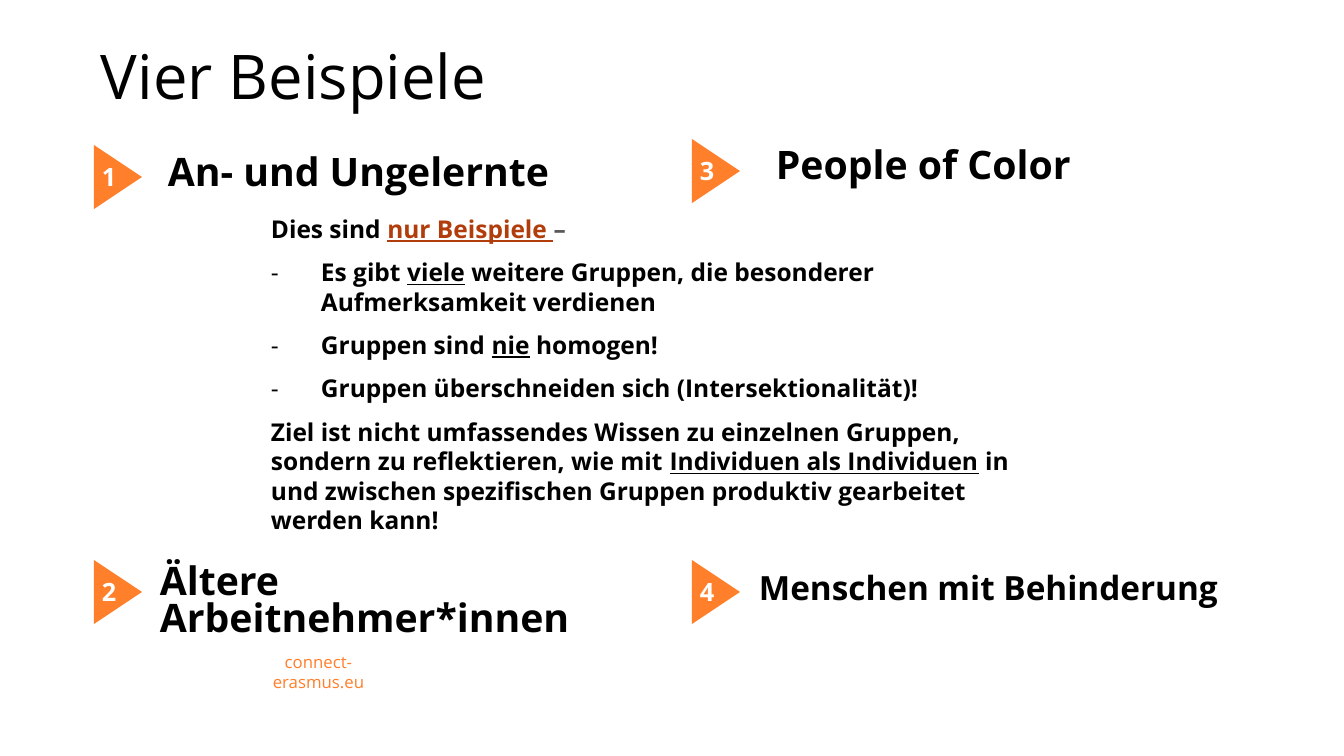
"""Build the slide "Vier Beispiele": four numbered groups around a central note."""
from lxml import etree
from pptx import Presentation
from pptx import util as u
from pptx.dml.color import RGBColor
from pptx.enum import shapes, text
from pptx.oxml.ns import qn

FONT = "Open Sans"
BLACK, WHITE, ORANGE, RUST, GREY = "000000", "FFFFFF", "FF7F2A", "B23D0C", "595959"
EMU_PER_PX = 914400 / 100.8
PAGE_WIDTH, PAGE_HEIGHT = 1344, 756
MARKER_WIDTH, MARKER_HEIGHT = 64, 48
HANGING = 50

TITLE = "Vier Beispiele"
ADDRESS = "connect-erasmus.eu"

# number, marker (left, top), heading, heading box, size, line spacing
GROUPS = [
    ("1", (86, 153), "An- und Ungelernte", (158, 151, 443, 51), 28, 0.8),
    ("2", (86, 568), "Ältere Arbeitnehmer*innen", (150, 560, 503, 89), 28, 0.8),
    ("3", (684, 147), "People of Color", (766, 141, 363, 67), 28, 0.9),
    ("4", (684, 568), "Menschen mit Behinderung", (749, 570, 503, 51), 23.8, 0.8),
]

# bulleted, spans of (text, colour, underlined)
NOTE = [
    (False, [("Dies sind ", BLACK, False), ("nur Beispiele ", RUST, True), ("–", GREY, False)]),
    (True, [("Es gibt ", BLACK, False), ("viele", BLACK, True),
            (" weitere Gruppen, die besonderer Aufmerksamkeit verdienen", BLACK, False)]),
    (True, [("Gruppen sind ", BLACK, False), ("nie", BLACK, True), (" homogen!", BLACK, False)]),
    (True, [("Gruppen überschneiden sich (Intersektionalität)!", BLACK, False)]),
    (False, [("Ziel ist nicht umfassendes Wissen zu einzelnen Gruppen, "
              "sondern zu reflektieren, wie mit ", BLACK, False),
             ("Individuen als Individuen", BLACK, True),
             (" in und zwischen spezifischen Gruppen produktiv gearbeitet werden kann!",
              BLACK, False)]),
]


def px(length):
    return u.Emu(round(length * EMU_PER_PX))


def colour(value):
    return RGBColor.from_string(value)


def style(para, size, value=BLACK, bold=False, spacing=None):
    para.font.name = FONT
    para.font.size = u.Pt(size)
    para.font.bold = bold
    para.font.color.rgb = colour(value)
    if spacing:
        para.line_spacing = spacing


def add_box(page, frame, wrap=True, anchor=text.MSO_ANCHOR.TOP):
    box = page.shapes.add_textbox(*map(px, frame))
    box.text_frame.word_wrap = wrap
    box.text_frame.vertical_anchor = anchor
    return box.text_frame


def add_line(page, frame, words, size, value=BLACK, bold=False, spacing=None, **layout):
    para = add_box(page, frame, **layout).paragraphs[0]
    para.text = words
    style(para, size, value, bold, spacing)
    return para


def add_marker(page, number, left, top):
    marker = page.shapes.add_shape(shapes.MSO_SHAPE.ISOSCELES_TRIANGLE,
                                   *map(px, (left, top, MARKER_WIDTH, MARKER_HEIGHT)))
    marker.rotation = 90
    marker.shadow.inherit = False
    marker.fill.solid()
    marker.fill.fore_color.rgb = colour(ORANGE)
    marker.line.fill.background()
    add_line(page, (left + 6, top + 3, 35, 40), number, 18, WHITE, True, wrap=False)


def add_dash(para):
    props = para._p.get_or_add_pPr()
    props.set("marL", str(px(HANGING)))
    props.set("indent", str(-px(HANGING)))
    etree.SubElement(props, qn("a:buFont")).set("typeface", FONT)
    etree.SubElement(props, qn("a:buChar")).set("char", "-")


def add_note(page, frame):
    box = add_box(page, frame)
    for index, (bulleted, spans) in enumerate(NOTE):
        para = box.add_paragraph() if index else box.paragraphs[0]
        if bulleted:
            add_dash(para)
        style(para, 17.5, bold=True)
        para.space_before = u.Pt(10 if index else 0)
        for words, value, underlined in spans:
            span = para.add_run()
            span.text = words
            if value != BLACK:
                span.font.color.rgb = colour(value)
            if underlined:
                span.font.underline = True


def main():
    deck = Presentation()
    deck.slide_width, deck.slide_height = px(PAGE_WIDTH), px(PAGE_HEIGHT)
    page = deck.slides.add_slide(deck.slide_layouts[6])
    add_line(page, (91, 32, 1159, 86), TITLE, 44, spacing=0.9, anchor=text.MSO_ANCHOR.BOTTOM)
    address = add_line(page, (230, 657, 177, 30), ADDRESS, 12, ORANGE,
                       anchor=text.MSO_ANCHOR.MIDDLE)
    address.alignment = text.PP_ALIGN.CENTER
    for number, place, heading, frame, size, spacing in GROUPS:
        add_line(page, frame, heading, size, bold=True, spacing=spacing)
        add_marker(page, number, *place)
    add_note(page, (261, 209, 797, 340))
    deck.save("out.pptx")


if __name__ == "__main__":
    main()
